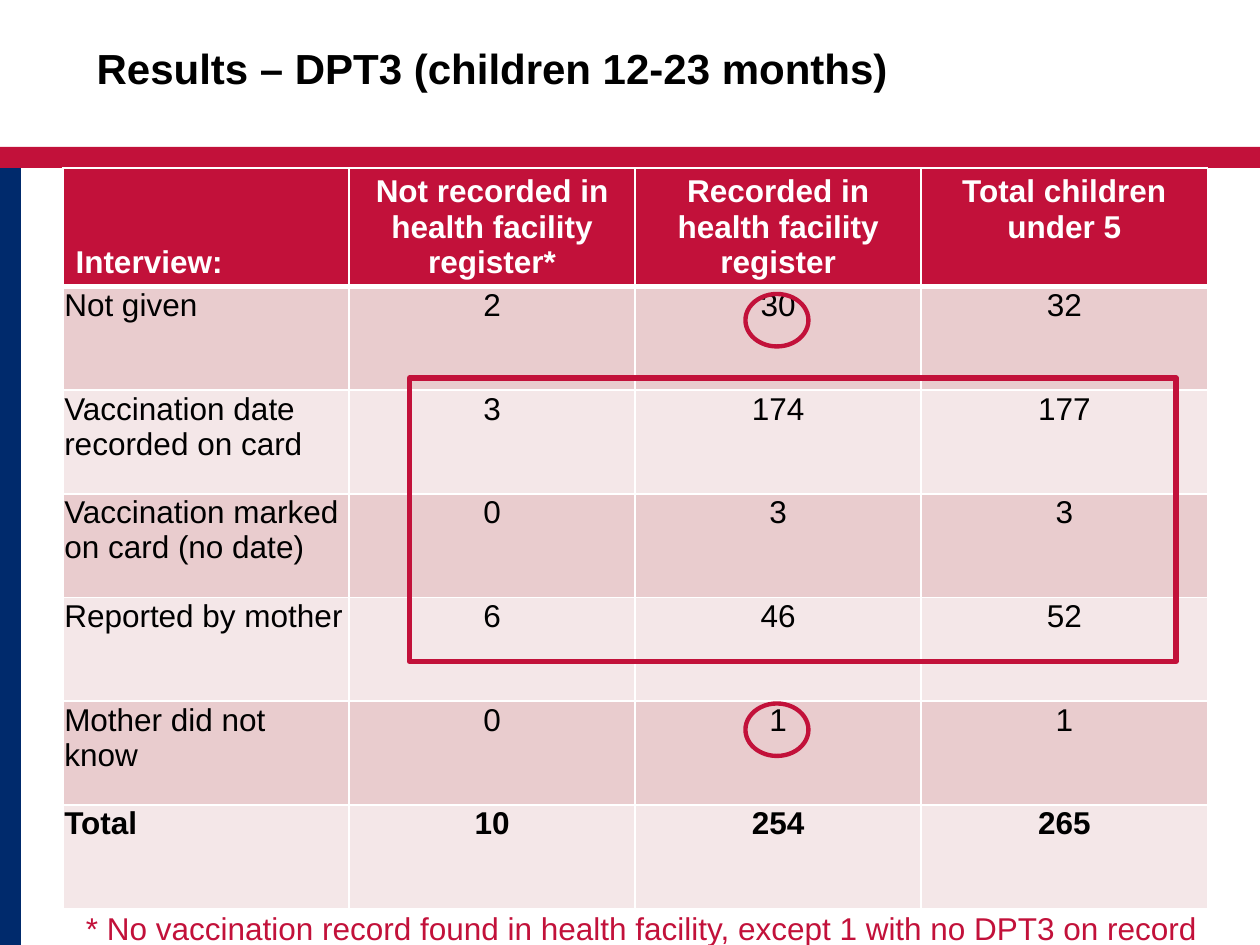
from typing import NamedTuple

from lxml import etree
from pptx import Presentation
from pptx import util as u
from pptx.dml.color import RGBColor
from pptx.enum import shapes, text
from pptx.oxml.ns import qn

EMU_PER_PX = 9525
FONT = "Arial"
RED, NAVY, WHITE, BLACK = "C2113A", "002A6C", "FFFFFF", "000000"
BANDS = ("E9CCCE", "F4E7E8")


class Box(NamedTuple):
    left: int
    top: int
    width: int
    height: int

    def emu(self) -> list[int]:
        return [px(length) for length in self]


class Bar(NamedTuple):
    box: Box
    color: str


class Highlight(NamedTuple):
    kind: shapes.MSO_SHAPE
    box: Box
    weight: float


BARS = (
    Bar(Box(0, 112, 960, 16), RED),
    Bar(Box(0, 128, 16, 592), NAVY),
)
HIGHLIGHTS = (
    Highlight(shapes.MSO_SHAPE.OVAL, Box(568, 224, 48, 40), 2.5),
    Highlight(shapes.MSO_SHAPE.OVAL, Box(568, 536, 48, 40), 2.5),
    Highlight(shapes.MSO_SHAPE.RECTANGLE, Box(312, 288, 584, 216), 3),
)
TABLE_LEFT, TABLE_TOP, COLUMN_WIDTH, ROW_HEIGHT = 48, 128, 218, 79
RESULTS = (
    ("Interview:", "Not recorded in health facility register*",
     "Recorded in health facility register", "Total children under 5"),
    ("Not given", "2", "30", "32"),
    ("Vaccination date recorded on card", "3", "174", "177"),
    ("Vaccination marked on card (no date)", "0", "3", "3"),
    ("Reported by mother", "6", "46", "52"),
    ("Mother did not know", "0", "1", "1"),
    ("Total", "10", "254", "265"),
)


def px(length: int) -> int:
    return length * EMU_PER_PX


def rgb(color: str) -> RGBColor:
    return RGBColor.from_string(color)


def write(frame, words: str, size: int, color: str, bold: bool = False,
          align=text.PP_ALIGN.LEFT) -> None:
    paragraph = frame.paragraphs[0]
    paragraph.alignment = align
    run = paragraph.add_run()
    run.text = words
    run.font.name = FONT
    run.font.size = u.Pt(size)
    run.font.bold = bold
    run.font.color.rgb = rgb(color)


def draw_bar(slide, bar: Bar) -> None:
    shape = slide.shapes.add_shape(shapes.MSO_SHAPE.RECTANGLE, *bar.box.emu())
    shape.shadow.inherit = False
    shape.fill.solid()
    shape.fill.fore_color.rgb = rgb(bar.color)
    shape.line.fill.background()


def draw_highlight(slide, mark: Highlight) -> None:
    shape = slide.shapes.add_shape(mark.kind, *mark.box.emu())
    shape.shadow.inherit = False
    shape.fill.background()
    shape.line.color.rgb = rgb(RED)
    shape.line.width = u.Pt(mark.weight)


def set_borders(cell, top: int, bottom: int) -> None:
    properties = cell._tc.get_or_add_tcPr()
    sides = (("lnL", 1), ("lnR", 1), ("lnT", top), ("lnB", bottom))
    for position, (side, weight) in enumerate(sides):
        line = etree.Element(qn(f"a:{side}"), w=str(u.Pt(weight)))
        fill = etree.SubElement(line, qn("a:solidFill"))
        etree.SubElement(fill, qn("a:srgbClr"), val=WHITE)
        properties.insert(position, line)


def draw_results(slide) -> None:
    rows, columns = len(RESULTS), len(RESULTS[0])
    box = Box(TABLE_LEFT, TABLE_TOP, columns * COLUMN_WIDTH, rows * ROW_HEIGHT)
    table = slide.shapes.add_table(rows, columns, *box.emu()).table
    for column in table.columns:
        column.width = px(COLUMN_WIDTH)
    for r, row in enumerate(RESULTS):
        table.rows[r].height = px(ROW_HEIGHT)
        header, total = r == 0, r == rows - 1
        for c, words in enumerate(row):
            cell = table.cell(r, c)
            cell.fill.solid()
            cell.fill.fore_color.rgb = rgb(RED if header else BANDS[(r - 1) % 2])
            set_borders(cell, top=3 if r == 1 else 1, bottom=3 if header else 1)
            if header:
                cell.vertical_anchor = (text.MSO_ANCHOR.BOTTOM if c == 0
                                        else text.MSO_ANCHOR.TOP)
            else:
                cell.margin_left = cell.margin_right = cell.margin_top = px(1)
                cell.margin_bottom = 0
            write(cell.text_frame, words, 18, WHITE if header else BLACK,
                  bold=header or total,
                  align=text.PP_ALIGN.LEFT if c == 0 else text.PP_ALIGN.CENTER)


def draw_title(slide) -> None:
    title = slide.shapes.title
    title.left, title.top, title.width, title.height = Box(64, 24, 816, 64).emu()
    frame = title.text_frame
    frame.auto_size = text.MSO_AUTO_SIZE.NONE
    frame.vertical_anchor = text.MSO_ANCHOR.TOP
    frame.margin_top = px(8)
    write(frame, "Results – DPT3 (children 12-23 months)", 24, BLACK, bold=True)


def draw_footnote(slide) -> None:
    frame = slide.shapes.add_textbox(*Box(56, 688, 875, 38).emu()).text_frame
    frame.word_wrap = False
    frame.auto_size = text.MSO_AUTO_SIZE.SHAPE_TO_FIT_TEXT
    write(frame, "* No vaccination record found in health facility, "
          "except 1 with no DPT3 on record", 18, RED)


def main() -> None:
    deck = Presentation()
    deck.slide_width, deck.slide_height = px(960), px(720)
    slide = deck.slides.add_slide(deck.slide_layouts[5])

    # Frame and heading
    for bar in BARS:
        draw_bar(slide, bar)
    draw_title(slide)

    # Interview answers against the facility register
    draw_results(slide)
    for mark in HIGHLIGHTS:
        draw_highlight(slide, mark)
    draw_footnote(slide)

    deck.save("out.pptx")


if __name__ == "__main__":
    main()
